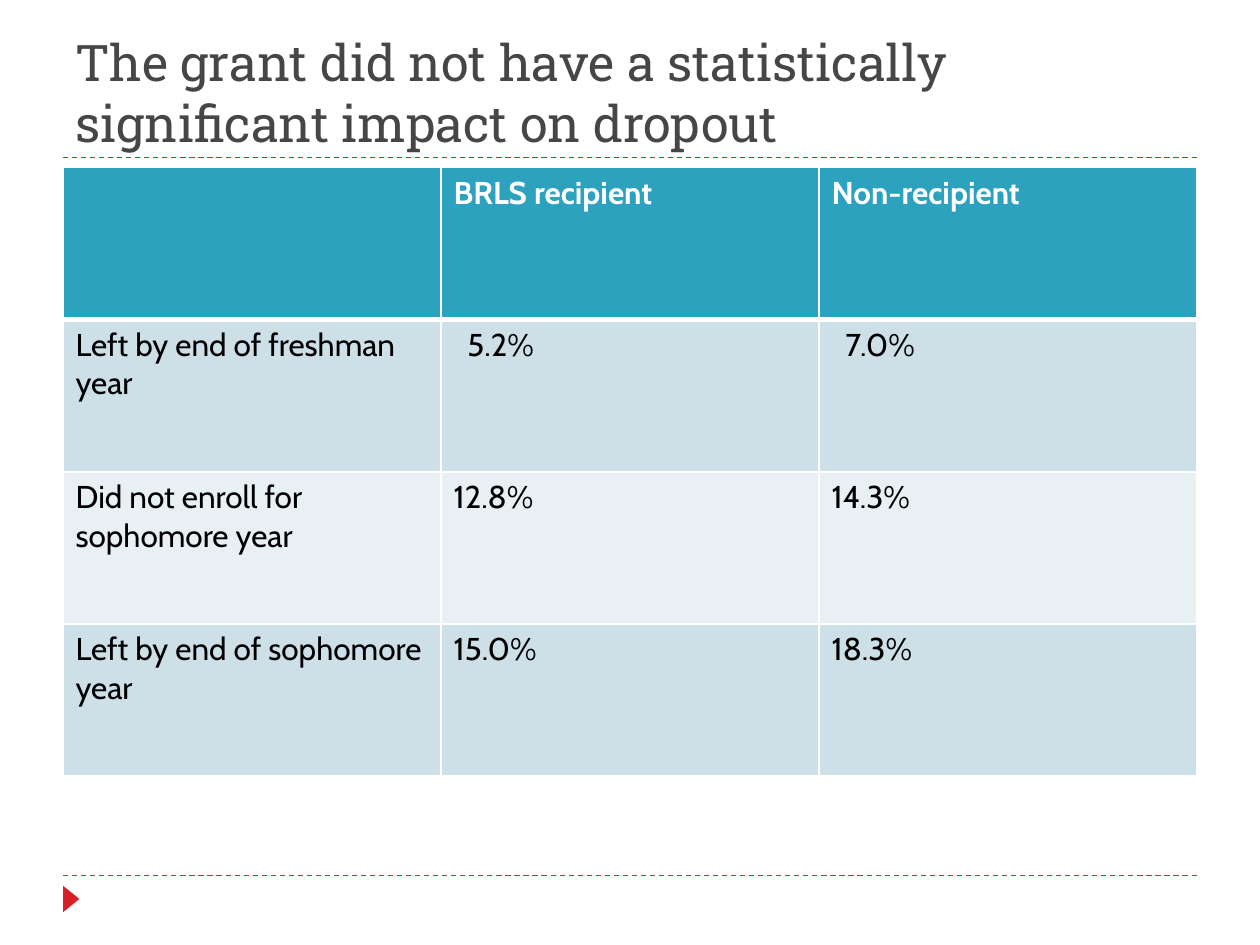
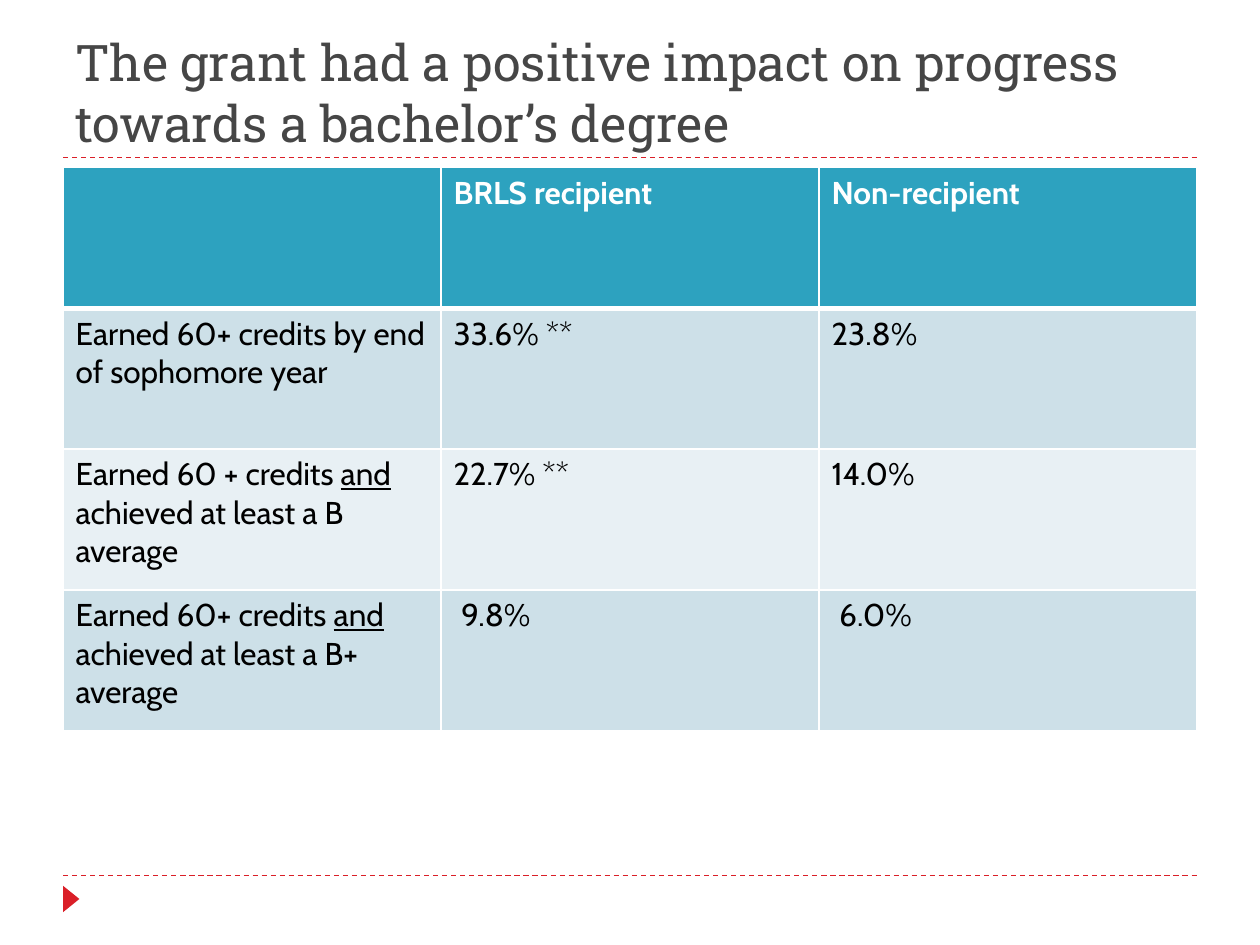
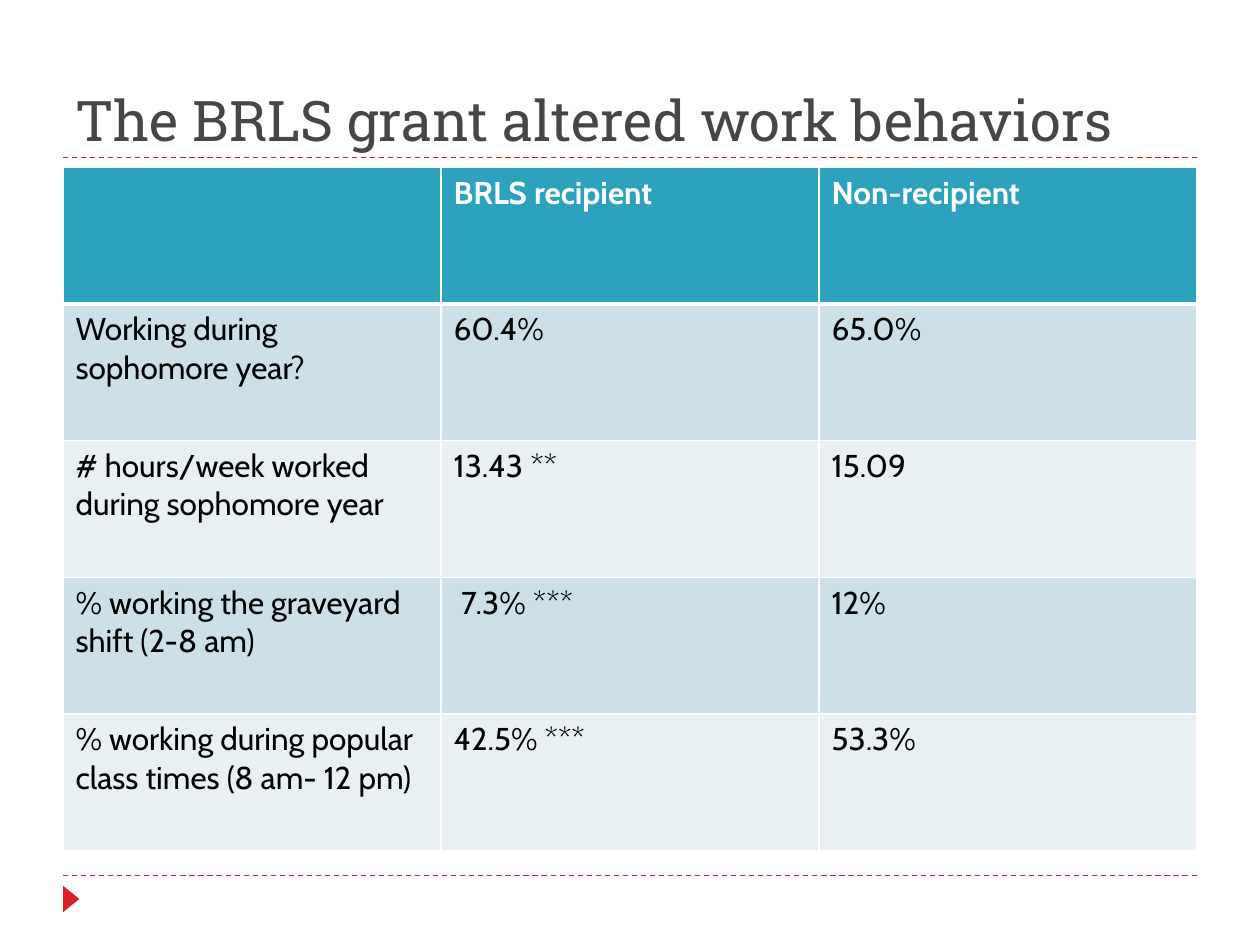
from lxml import etree
from pptx import Presentation
from pptx.dml.color import RGBColor
from pptx.enum.dml import MSO_LINE
from pptx.enum.shapes import MSO_CONNECTOR, MSO_SHAPE
from pptx.enum.text import MSO_ANCHOR
from pptx.oxml.ns import qn
from pptx.util import Inches, Pt

DASH = MSO_LINE.DASH
STRAIGHT = MSO_CONNECTOR.STRAIGHT
TRIANGLE = MSO_SHAPE.ISOSCELES_TRIANGLE
BOTTOM = MSO_ANCHOR.BOTTOM

COLORS = {
    "title": "464646",
    "accent": "DA1F28",
    "header": "2DA2BF",
    "band_dark": "CDE0E8",
    "band_light": "E8F0F4",
    "white": "FFFFFF",
    "black": "000000",
}
LEFT, WIDTH = 0.5, 9
RULE_HEIGHTS = (1.25, 6.95)
TABLE_TOP = 1.33
CELL_MARGIN = 0.1

TITLE_FORMAT = {"name": "Roboto Slab", "bold": False}
HEADER_FORMAT = {"name": "Cabin", "size": Pt(18), "bold": True}
BODY_FORMAT = {"name": "Cabin", "size": Pt(18), "bold": False}

HEADINGS = ("", "BRLS recipient", "Non-recipient")

# Underscores enclose underlined words; digit_indent aligns one-digit values
PAGES = [
    {
        "title": "The grant did not have a statistically significant impact on dropout",
        "title_size": 28.8,
        "table_height": 4.83,
        "digit_indent": 0.11,
        "rows": [
            ("Left by end of freshman year", "5.2%", "7.0%"),
            ("Did not enroll for sophomore year", "12.8%", "14.3%"),
            ("Left by end of sophomore year", "15.0%", "18.3%"),
        ],
    },
    {
        "title": "The grant had a positive impact on progress towards a bachelor’s degree",
        "title_size": 28.8,
        "table_height": 4.47,
        "digit_indent": 0.06,
        "rows": [
            ("Earned 60+ credits by end of sophomore year", "33.6% **", "23.8%"),
            ("Earned 60 + credits _and_ achieved at least a B average", "22.7% **", "14.0%"),
            ("Earned 60+ credits _and_ achieved at least a B+ average", "9.8%", "6.0%"),
        ],
    },
    {
        "title": "The BRLS grant altered work behaviors",
        "title_size": 32,
        "table_height": 5.42,
        "digit_indent": 0.06,
        "rows": [
            ("Working during sophomore year?", "60.4%", "65.0%"),
            ("# hours/week worked during sophomore year", "13.43 **", "15.09"),
            ("% working the graveyard shift (2-8 am)", "7.3% ***", "12%"),
            ("% working during popular class times (8 am- 12 pm)", "42.5% ***", "53.3%"),
        ],
    },
]


def color(name):
    return RGBColor.from_string(COLORS[name])


def add_span(para, text, color_name, formats):
    span = para.add_run()
    span.text = text
    for attribute, value in formats.items():
        setattr(span.font, attribute, value)
    span.font.color.rgb = color(color_name)


def add_rule(page, height):
    rule = page.shapes.add_connector(
        STRAIGHT, Inches(LEFT), Inches(height), Inches(LEFT + WIDTH), Inches(height))
    rule.line.color.rgb = color("accent")
    rule.line.width = Pt(0.75)
    rule.line.dash_style = DASH
    etree.SubElement(rule.line._get_or_add_ln().getparent(), qn("a:effectLst"))


def add_marker(page):
    marker = page.shapes.add_shape(
        TRIANGLE, Inches(0.46), Inches(7.07), Inches(0.21), Inches(0.13))
    marker.rotation = 90
    marker.shadow.inherit = False
    marker.fill.solid()
    marker.fill.fore_color.rgb = color("accent")
    marker.line.fill.background()


def add_title(page, text, size):
    box = page.shapes.add_textbox(Inches(LEFT), Inches(0.17), Inches(WIDTH), Inches(1.08))
    frame = box.text_frame
    frame.word_wrap = True
    frame.vertical_anchor = BOTTOM
    frame.margin_bottom = Inches(0.04)
    add_span(frame.paragraphs[0], text, "title", {**TITLE_FORMAT, "size": Pt(size)})


def set_borders(cell, widths):
    properties = cell._tc.get_or_add_tcPr()
    for side, width in widths.items():
        border = etree.SubElement(properties, qn(f"a:ln{side}"), w=str(Pt(width)))
        fill = etree.SubElement(border, qn("a:solidFill"))
        etree.SubElement(fill, qn("a:srgbClr"), val=COLORS["white"])


def fill_cell(cell, text, row, digit_indent):
    # The line under the header row is thicker than the others
    set_borders(cell, {"L": 1, "R": 1, "T": 3 if row == 1 else 1, "B": 3 if row == 0 else 1})
    cell.fill.solid()
    band = "header" if row == 0 else ("band_light", "band_dark")[row % 2]
    cell.fill.fore_color.rgb = color(band)
    if text.find(".") == 1:
        cell.margin_left = Inches(CELL_MARGIN + digit_indent)
    text_color, formats = ("white", HEADER_FORMAT) if row == 0 else ("black", BODY_FORMAT)
    para = cell.text_frame.paragraphs[0]
    for number, part in enumerate(text.split("_")):
        if part:
            add_span(para, part, text_color, {**formats, "underline": number % 2 == 1})


def add_results_table(page, rows, height, digit_indent):
    lines = [HEADINGS, *rows]
    table = page.shapes.add_table(
        len(lines), len(HEADINGS), Inches(LEFT), Inches(TABLE_TOP),
        Inches(WIDTH), Inches(height)).table
    for row, line in enumerate(lines):
        for column, text in enumerate(line):
            fill_cell(table.cell(row, column), text, row, digit_indent)


def main():
    deck = Presentation()
    deck.slide_width, deck.slide_height = Inches(10), Inches(7.5)
    for content in PAGES:
        page = deck.slides.add_slide(deck.slide_layouts[6])
        # Shared frame
        for height in RULE_HEIGHTS:
            add_rule(page, height)
        add_marker(page)
        # Content
        add_title(page, content["title"], content["title_size"])
        add_results_table(
            page, content["rows"], content["table_height"], content["digit_indent"])
    deck.save("out.pptx")


if __name__ == "__main__":
    main()
